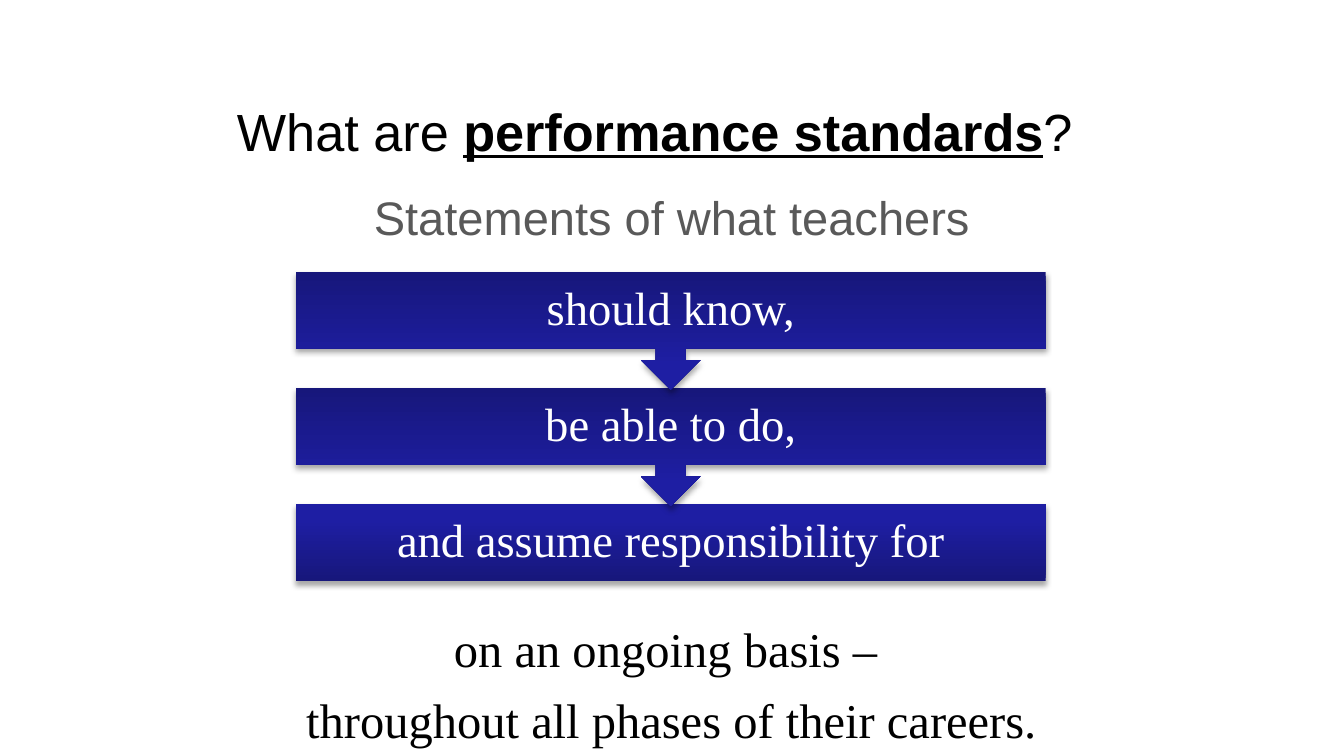
from pptx import Presentation
from pptx.dml.color import RGBColor
from pptx.enum.shapes import MSO_SHAPE
from pptx.enum.text import MSO_ANCHOR, PP_ALIGN
from pptx.oxml import parse_xml
from pptx.oxml.ns import nsdecls
from pptx.util import Pt

RECT = MSO_SHAPE.RECTANGLE
CALLOUT = MSO_SHAPE.UP_ARROW_CALLOUT
CENTER = PP_ALIGN.CENTER
TOP, MIDDLE = MSO_ANCHOR.TOP, MSO_ANCHOR.MIDDLE

SANS, SERIF = "Arial", "Times New Roman"
STOPS = [(0, "17177B"), (80, "1E1EA3"), (100, "1C1CA5")]
STEPS = ["should know,", "be able to do,", "and assume responsibility for"]
LEFT, WIDTH = 158.4, 401.8
FIRST, PITCH = 145.5, 62.3
BAR, TALL = 41.2, 63.3


def color(value):
    return RGBColor.from_string(value)


def add_text(slide, box, lines, font, size, tint, anchor=TOP,
             pad=(7.2, 3.6), leading=None, gap=0):
    """Add centred text; each line is a list of (text, is_strong) runs."""
    shape = slide.shapes.add_textbox(*map(Pt, box))
    frame = shape.text_frame
    frame.word_wrap = True
    frame.vertical_anchor = anchor
    frame.margin_left = frame.margin_right = Pt(pad[0])
    frame.margin_top = frame.margin_bottom = Pt(pad[1])
    for i, line in enumerate(lines):
        para = frame.add_paragraph() if i else frame.paragraphs[0]
        para.alignment = CENTER
        if leading:
            para.line_spacing = leading
        if i:
            para.space_before = Pt(gap)
        for text, strong in line:
            run = para.add_run()
            run.text = text
            run.font.name, run.font.size = font, Pt(size)
            run.font.color.rgb = color(tint)
            run.font.bold = run.font.underline = strong


def style_step(shape):
    """Give a step its upward gradient and soft shadow, without a line."""
    shape.line.fill.background()
    line = shape.line._get_or_add_ln()
    stops = "".join(
        f'<a:gs pos="{pos * 1000}"><a:srgbClr val="{tint}"/></a:gs>'
        for pos, tint in STOPS)
    line.addprevious(parse_xml(
        f'<a:gradFill {nsdecls("a")} rotWithShape="1"><a:gsLst>{stops}</a:gsLst>'
        '<a:lin ang="16200000" scaled="0"/></a:gradFill>'))
    line.addnext(parse_xml(
        f'<a:effectLst {nsdecls("a")}><a:outerShdw blurRad="{Pt(3.1)}" '
        f'dist="{Pt(1.8)}" dir="5400000" rotWithShape="0">'
        '<a:srgbClr val="000000"><a:alpha val="35000"/></a:srgbClr>'
        '</a:outerShdw></a:effectLst>'))


def add_step(slide, top, text, last):
    kind, height = (RECT, BAR) if last else (CALLOUT, TALL)
    shape = slide.shapes.add_shape(
        kind, Pt(LEFT), Pt(top), Pt(WIDTH), Pt(height))
    if not last:
        shape.rotation = 180
        for i, value in enumerate((0.25, 0.25, 0.25, 0.65)):
            shape.adjustments[i] = value
    style_step(shape)
    # Separate label, so that it stays upright on a turned callout
    add_text(slide, (LEFT, top, WIDTH, BAR), [[(text, False)]], SERIF, 25,
             "FFFFFF", MIDDLE, (13.7, 13.7), 0.9)


def main():
    deck = Presentation()
    deck.slide_width, deck.slide_height = Pt(720), Pt(405)
    slide = deck.slides.add_slide(deck.slide_layouts[6])

    # Title and lead-in
    title = [("What are ", False), ("performance standards", True), ("?", False)]
    add_text(slide, (5.8, 36, 689.8, 67.7), [title], SANS, 28, "000000", MIDDLE)
    add_text(slide, (54, 99.4, 612, 36), [[("Statements of what teachers", False)]],
             SANS, 25.2, "595959", leading=0.95)

    # Steps, from the bottom up so that each arrow lies over the next bar
    end = len(STEPS) - 1
    for i in range(end, -1, -1):
        add_step(slide, FIRST + i * PITCH, STEPS[i], i == end)

    # Closing lines
    closing = ["on an ongoing basis – ", "throughout all phases of their careers."]
    add_text(slide, (54, 328.3, 612, 36), [[(text, False)] for text in closing],
             SERIF, 26, "000000", gap=6.4)

    deck.save("out.pptx")


if __name__ == "__main__":
    main()
